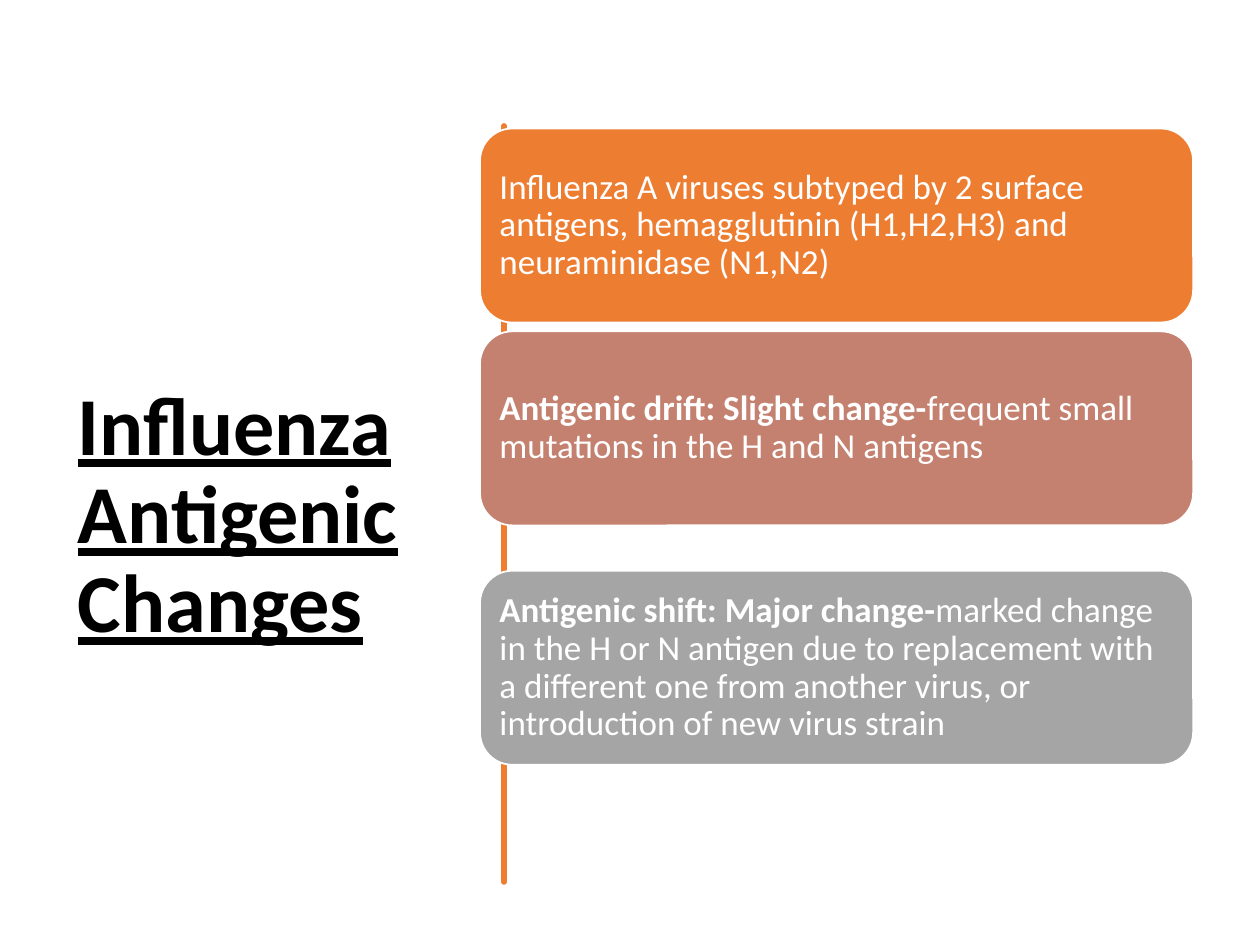
from pptx import Presentation
from pptx.dml.color import RGBColor
from pptx.enum.shapes import MSO_SHAPE
from pptx.enum.text import MSO_ANCHOR, PP_ALIGN
from pptx.util import Inches, Pt

FONT = "Calibri"
CARD_LEFT, CARD_WIDTH, CARD_HEIGHT = 3.81, 5.66, 1.54

# Top, fill, bold lead and plain remainder of each card
CARDS = [
    (1.02, "ED7D31", "",
     "Influenza A viruses subtyped by 2 surface antigens, "
     "hemagglutinin (H1,H2,H3) and neuraminidase (N1,N2)"),
    (2.63, "C48170", "Antigenic drift: Slight change-",
     "frequent small mutations in the H and N antigens"),
    (4.53, "A5A5A5", "Antigenic shift: Major change-",
     "marked change in the H or N antigen due to replacement with "
     "a different one from another virus, or introduction of new virus strain"),
]

# Edges of the hand-drawn divider, both from top to bottom
RIGHT_EDGE = [(3.56, 0.84), (3.57, 1.0), (3.56, 1.46), (3.57, 1.9),
              (3.56, 2.26), (3.57, 2.6), (3.56, 2.94), (3.56, 3.3),
              (3.57, 3.56), (3.57, 3.9), (3.58, 4.13), (3.57, 4.3),
              (3.54, 4.48), (3.55, 4.75), (3.56, 5.1), (3.58, 5.4),
              (3.59, 5.6), (3.56, 5.86), (3.57, 6.1), (3.58, 6.4),
              (3.57, 6.65), (3.56, 6.76)]
LEFT_EDGE = [(3.55, 0.84), (3.56, 1.1), (3.55, 1.5), (3.54, 1.81),
             (3.55, 2.1), (3.54, 2.4), (3.55, 2.75), (3.54, 3.35),
             (3.55, 3.8), (3.55, 4.15), (3.53, 4.45), (3.53, 4.65),
             (3.55, 5.0), (3.55, 5.57), (3.54, 5.85), (3.55, 6.1),
             (3.54, 6.35), (3.55, 6.76)]


def color(hex_string):
    return RGBColor.from_string(hex_string)


def paint(shape, fill, line, line_width):
    shape.shadow.inherit = False
    shape.fill.solid()
    shape.fill.fore_color.rgb = color(fill)
    shape.line.color.rgb = color(line)
    shape.line.width = Pt(line_width)


def prepare_text(shape, side, top, bottom):
    frame = shape.text_frame
    frame.word_wrap = True
    frame.vertical_anchor = MSO_ANCHOR.MIDDLE
    frame.margin_left = frame.margin_right = Inches(side)
    frame.margin_top, frame.margin_bottom = Inches(top), Inches(bottom)
    paragraph = frame.paragraphs[0]
    paragraph.alignment = PP_ALIGN.LEFT
    paragraph.line_spacing = 0.9
    return paragraph


def add_run(paragraph, text, size, hex_string, bold=False, underline=False):
    run = paragraph.add_run()
    run.text = text
    run.font.name = FONT
    run.font.size = Pt(size)
    run.font.color.rgb = color(hex_string)
    run.font.bold = bold
    run.font.underline = underline


def add_title(slide, text):
    box = slide.shapes.add_textbox(Inches(0.52), Inches(0.7),
                                   Inches(2.8), Inches(6.11))
    # The deep top margin sets the title below the middle
    paragraph = prepare_text(box, 0.1, 0.75, 0.05)
    paragraph.space_after = Pt(6)
    add_run(paragraph, text, 47, "000000", bold=True, underline=True)


def add_divider(slide):
    start, *others = RIGHT_EDGE + LEFT_EDGE[::-1]
    builder = slide.shapes.build_freeform(*start, scale=Inches(1))
    builder.add_line_segments(others, close=True)
    paint(builder.convert_to_shape(), "ED7D31", "ED7D31", 3.25)


def add_card(slide, top, fill, lead, remainder):
    card = slide.shapes.add_shape(
        MSO_SHAPE.ROUNDED_RECTANGLE, Inches(CARD_LEFT), Inches(top),
        Inches(CARD_WIDTH), Inches(CARD_HEIGHT))
    paint(card, fill, "FFFFFF", 1)
    paragraph = prepare_text(card, 0.08, 0.08, 0.08)
    if lead:
        add_run(paragraph, lead, 20, "FFFFFF", bold=True)
    add_run(paragraph, remainder, 20, "FFFFFF")


def main():
    presentation = Presentation()
    presentation.slide_width, presentation.slide_height = Inches(10), Inches(7.5)
    slide = presentation.slides.add_slide(presentation.slide_layouts[6])

    # Left side: title and divider
    add_title(slide, "Influenza Antigenic Changes")
    add_divider(slide)

    # Right side: cards
    for card in CARDS:
        add_card(slide, *card)

    presentation.save("out.pptx")


if __name__ == "__main__":
    main()
